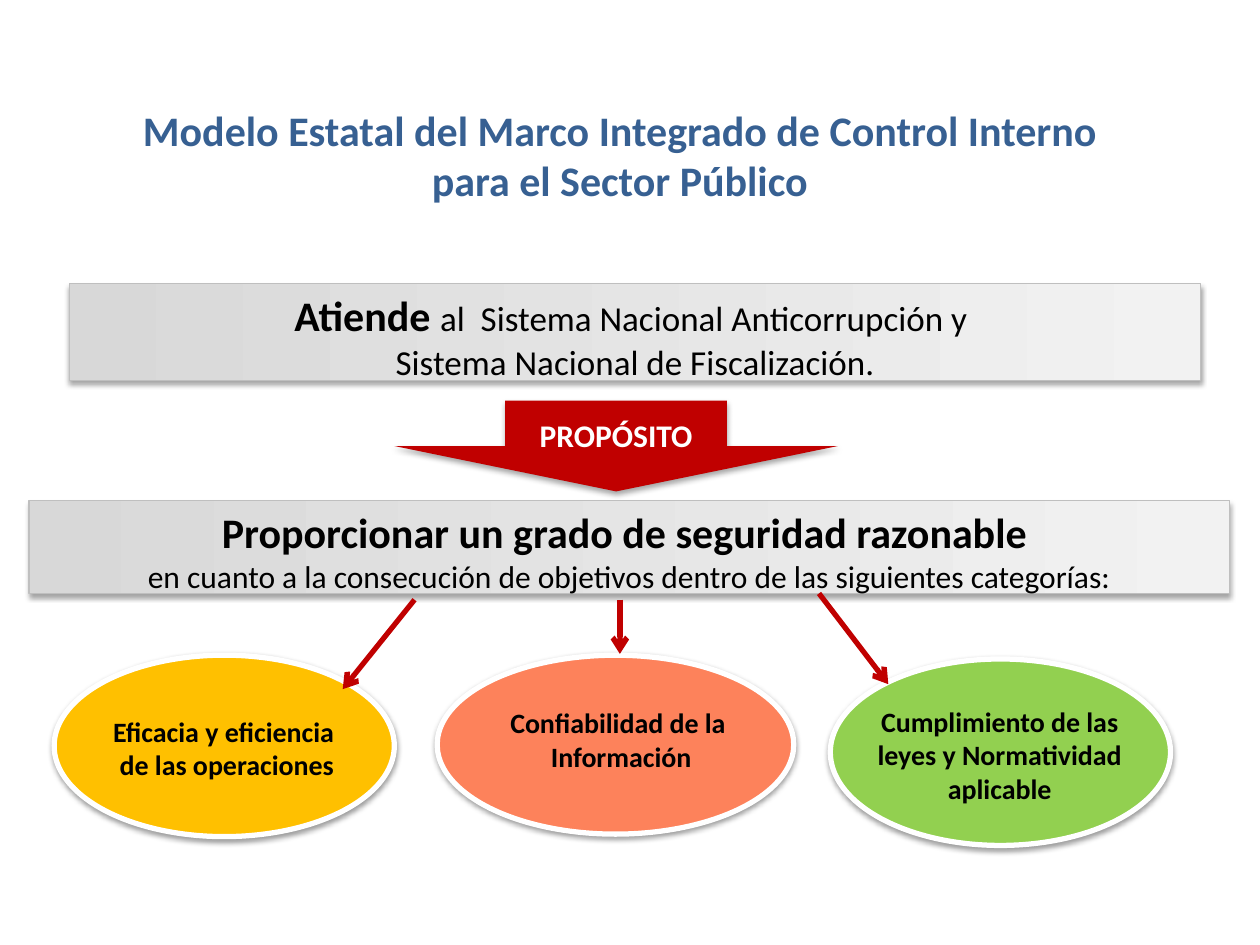
from lxml.etree import SubElement
from pptx import Presentation
from pptx.dml.color import RGBColor
from pptx.enum.shapes import MSO_CONNECTOR, MSO_SHAPE
from pptx.enum.text import MSO_ANCHOR, MSO_AUTO_SIZE, PP_ALIGN
from pptx.oxml.ns import qn
from pptx.util import Inches, Pt

BLUE = RGBColor(0x37, 0x60, 0x92)
BLACK = RGBColor(0, 0, 0)
WHITE = RGBColor(255, 255, 255)
RED = RGBColor(0xC0, 0, 0)
GRAY_START = RGBColor(0xD8, 0xD8, 0xD8)
GRAY_END = RGBColor(0xF2, 0xF2, 0xF2)
GRAY_LINE = RGBColor(0xBF, 0xBF, 0xBF)
YELLOW = RGBColor(0xFF, 0xC0, 0)
CORAL = RGBColor(0xFD, 0x82, 0x5B)
GREEN = RGBColor(0x92, 0xD0, 0x50)

TITLE = "Modelo Estatal del Marco Integrado de Control Interno para el Sector Público"
BANNERS = [
    ((0.55, 2.25, 8.98, 0.77), [
        [("Atiende ", 24, True), ("al  Sistema Nacional Anticorrupción y ", 20, False)],
        [("Sistema Nacional de Fiscalización.", 20, False)],
    ]),
    ((0.23, 3.97, 9.53, 0.74), [
        [("Proporcionar un grado de seguridad razonable ", 24, True)],
        [("en cuanto a la consecución de objetivos dentro de las siguientes categorías:",
          18, False)],
    ]),
]
CATEGORIES = [
    ((0.43, 5.2, 2.7, 1.44), YELLOW, (0.64, 5.62, 2.32, 0.59),
     ["Eficacia y eficiencia ", "de las operaciones"]),
    ((3.47, 5.2, 2.83, 1.42), CORAL, (3.55, 5.55, 2.71, 0.59),
     ["Confiabilidad de la", " Información"]),
    ((6.59, 5.23, 2.7, 1.48), GREEN, (6.8, 5.54, 2.27, 0.84),
     ["Cumplimiento de las leyes y Normatividad aplicable"]),
]
PURPOSE = ((3.13, 3.18, 3.52, 0.72), "PROPÓSITO")
ARROWS = [(3.29, 4.76, 2.72, 5.47), (4.92, 4.76, 4.92, 5.19), (6.5, 4.71, 7.05, 5.43)]


def inches(values):
    return [Inches(value) for value in values]


def write_text(shape, paragraphs, color=BLACK, anchor=MSO_ANCHOR.TOP, indent=0):
    frame = shape.text_frame
    frame_format = {"word_wrap": True, "auto_size": MSO_AUTO_SIZE.NONE,
                    "vertical_anchor": anchor}
    for name, value in frame_format.items():
        setattr(frame, name, value)
    for index, runs in enumerate(paragraphs):
        paragraph = frame.add_paragraph() if index else frame.paragraphs[0]
        paragraph.alignment = PP_ALIGN.CENTER
        if indent:
            properties = paragraph._p.get_or_add_pPr()
            properties.set("marL", str(Inches(indent)))
            properties.set("indent", str(-Inches(indent)))
        for text, size, bold in runs:
            run = paragraph.add_run()
            run.text = text
            for name, value in {"name": "Calibri", "size": Pt(size), "bold": bold}.items():
                setattr(run.font, name, value)
            run.font.color.rgb = color


def add_shadow(shape, distance, opacity):
    shape.shadow.inherit = False
    effects = shape._element.spPr.find(qn("a:effectLst"))
    shadow = SubElement(effects, qn("a:outerShdw"), blurRad=str(Pt(3.1)),
                        dist=str(Pt(distance)), dir="5400000", rotWithShape="0")
    color = SubElement(shadow, qn("a:srgbClr"), val="000000")
    SubElement(color, qn("a:alpha"), val=str(opacity * 1000))


def add_banner(slide, box, paragraphs):
    banner = slide.shapes.add_shape(MSO_SHAPE.RECTANGLE, *inches(box))
    banner.fill.gradient()
    banner.fill.gradient_angle = 0
    for stop, color in zip(banner.fill.gradient_stops, (GRAY_START, GRAY_END)):
        stop.color.rgb = color
    banner.line.color.rgb = GRAY_LINE
    banner.line.width = Pt(0.75)
    add_shadow(banner, 1.8, 35)
    write_text(banner, paragraphs, indent=0.3)


def add_category(slide, box, color, label_box, lines):
    ellipse = slide.shapes.add_shape(MSO_SHAPE.OVAL, *inches(box))
    ellipse.fill.solid()
    ellipse.fill.fore_color.rgb = color
    ellipse.line.color.rgb = WHITE
    ellipse.line.width = Pt(3)
    add_shadow(ellipse, 1.6, 38)
    label = slide.shapes.add_textbox(*inches(label_box))
    write_text(label, [[(line, 16, True)] for line in lines])


def add_purpose(slide, box, text):
    purpose = slide.shapes.add_shape(MSO_SHAPE.DOWN_ARROW, *inches(box))
    purpose.fill.solid()
    purpose.fill.fore_color.rgb = RED
    purpose.line.fill.background()
    add_shadow(purpose, 1.8, 35)
    write_text(purpose, [[(text, 18, True)]], WHITE, MSO_ANCHOR.MIDDLE)


def add_arrow(slide, ends):
    arrow = slide.shapes.add_connector(MSO_CONNECTOR.STRAIGHT, *inches(ends))
    arrow.line.color.rgb = RED
    arrow.line.width = Pt(3)
    SubElement(arrow.line._get_or_add_ln(), qn("a:tailEnd"), type="arrow")
    SubElement(arrow._element.spPr, qn("a:effectLst"))


def main():
    presentation = Presentation()
    presentation.slide_width, presentation.slide_height = inches((10, 7.5))
    slide = presentation.slides.add_slide(presentation.slide_layouts[5])

    title = slide.shapes.title
    title.left, title.top, title.width, title.height = inches((0.7, 0.51, 8.44, 1.02))
    title.text_frame.margin_top = Inches(0.32)
    write_text(title, [[(TITLE, 24, True)]], BLUE)

    for banner in BANNERS:
        add_banner(slide, *banner)
    for category in CATEGORIES:
        add_category(slide, *category)
    add_purpose(slide, *PURPOSE)
    for ends in ARROWS:
        add_arrow(slide, ends)

    presentation.save("out.pptx")


if __name__ == "__main__":
    main()
